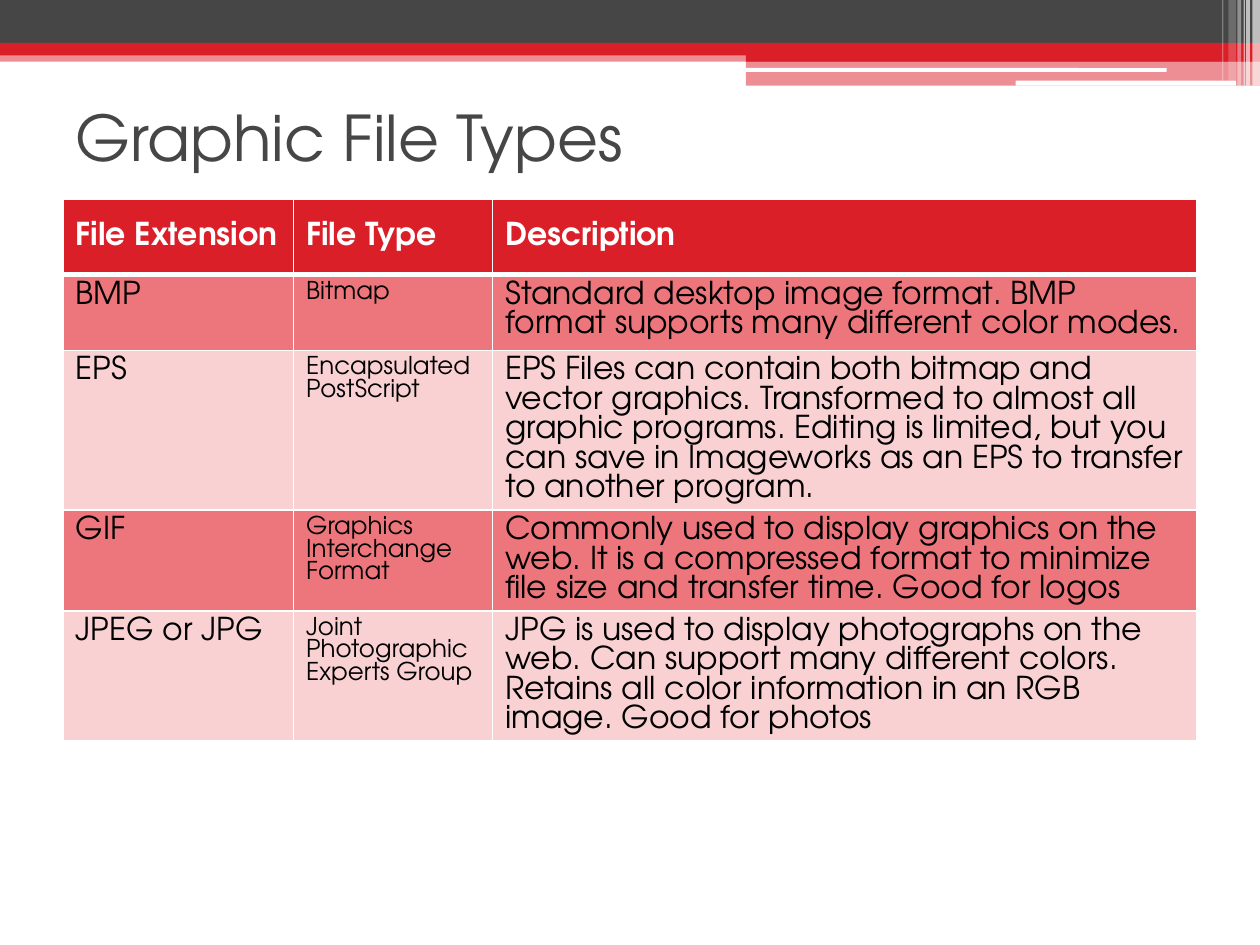
from dataclasses import dataclass

from lxml.etree import SubElement
from pptx import Presentation
from pptx.dml.color import RGBColor
from pptx.enum.shapes import MSO_SHAPE
from pptx.enum.text import MSO_ANCHOR, MSO_AUTO_SIZE, PP_ALIGN
from pptx.oxml import parse_xml
from pptx.oxml.ns import nsdecls, qn
from pptx.util import Inches, Pt


@dataclass(frozen=True)
class Theme:
    """Colours, font and type sizes of the slide."""
    font: str = "TeX Gyre Adventor"
    dark: str = "464646"
    red: str = "DA1F28"
    white: str = "FFFFFF"
    black: str = "000000"
    bands: tuple = ("EC767C", "F9D1D3")
    title_size: int = 36
    body_size: int = 18
    small_size: int = 14


THEME = Theme()
TITLE = "Graphic File Types"
COLUMN_WIDTHS = (1.83, 1.58, 5.59)
ROWS = (
    ("File Extension", "File Type", "Description"),
    ("BMP", "Bitmap",
     "Standard desktop image format. BMP format supports many different color modes."),
    ("EPS", "Encapsulated PostScript",
     "EPS Files can contain both bitmap and vector graphics. Transformed to almost all "
     "graphic programs. Editing is limited, but you can save in Imageworks as an EPS to "
     "transfer to another program."),
    ("GIF", "Graphics Interchange Format",
     "Commonly used to display graphics on the web. It is a compressed format to "
     "minimize file size and transfer time. Good for logos"),
    ("JPEG or JPG", "Joint Photographic Experts Group",
     "JPG is used to display photographs on the web. Can support many different colors. "
     "Retains all color information in an RGB image. Good for photos"),
)


def apply_format(target, values):
    """Set every attribute named in a dict of format values."""
    for name, value in values.items():
        setattr(target, name, value)


def format_text(text_frame, size, color, bold=False):
    """Give all paragraphs of a text frame one style."""
    for paragraph in text_frame.paragraphs:
        paragraph.alignment = PP_ALIGN.LEFT
        for run in paragraph.runs:
            apply_format(run.font, {"name": THEME.font, "size": Pt(size), "bold": bold})
            run.font.color.rgb = RGBColor.from_string(color)


def add_bar(slide, box, color, opacity=100, kind=MSO_SHAPE.RECTANGLE):
    """Add a borderless bar with an optional opacity in percent."""
    shape = slide.shapes.add_shape(kind, *map(Inches, box))
    shape.shadow.inherit = False
    shape.line.fill.background()
    shape.fill.solid()
    shape.fill.fore_color.rgb = RGBColor.from_string(color)
    if opacity < 100:
        color_element = shape.element.spPr.find(qn("a:solidFill"))[0]
        SubElement(color_element, qn("a:alpha"), val=str(opacity * 1000))


def add_banner(slide, box):
    """Draw the layered bands and vertical stripes across the top."""
    left, top, width, height = box
    step = left + 5.92
    step_width = left + width - step
    bands = (
        (left, 0.4, width, 0.09, THEME.red, 50),
        (left, 0, width, 0.34, THEME.dark, 100),
        (left, 0.34, width, 0.1, THEME.red, 100),
        (step, 0.39, step_width, 0.1, THEME.red, 100),
        (step, 0.48, step_width, 0.2, THEME.red, 50),
    )
    for x, y, bar_width, bar_height, color, opacity in bands:
        add_bar(slide, (x, top + y, bar_width, bar_height), color, opacity)
    for x, y, bar_width, bar_height in ((5.91, 0.54, 3.35, 0.03), (8.06, 0.64, 1.75, 0.04)):
        add_bar(slide, (left + x, top + y, bar_width, bar_height), THEME.white,
                kind=MSO_SHAPE.ROUNDED_RECTANGLE)
    stripes = (
        (9.94, 0.06, height, 65), (9.89, 0.03, height, 65), (9.87, 0.01, height, 60),
        (9.82, 0.03, height, 40), (9.75, 0.06, 0.64, 20), (9.7, 0.01, 0.64, 30),
    )
    for x, stripe_width, stripe_height, opacity in stripes:
        add_bar(slide, (left + x, top, stripe_width, stripe_height), THEME.white, opacity)


def add_title(slide, box):
    """Place and style the title placeholder."""
    title = slide.shapes.title
    apply_format(title, dict(zip(("left", "top", "width", "height"), map(Inches, box))))
    title.text = TITLE
    apply_format(title.text_frame, {
        "vertical_anchor": MSO_ANCHOR.MIDDLE,
        "auto_size": MSO_AUTO_SIZE.NONE,
        "word_wrap": True,
    })
    format_text(title.text_frame, THEME.title_size, THEME.dark)


def set_borders(cell, bottom_width):
    """Draw white cell borders with the given bottom width in points."""
    properties = cell._tc.get_or_add_tcPr()
    widths = {"lnL": 1, "lnR": 1, "lnT": 1, "lnB": bottom_width}
    for index, (side, width) in enumerate(widths.items()):
        border = parse_xml(
            f'<a:{side} {nsdecls("a")} w="{Pt(width)}"><a:solidFill>'
            f'<a:srgbClr val="{THEME.white}"/></a:solidFill></a:{side}>')
        properties.insert(index, border)


def format_cell(cell, row_index, column_index):
    """Style one cell as header or as part of a colour band."""
    header = row_index == 0
    small = column_index == 1 and not header
    cell.fill.solid()
    cell.fill.fore_color.rgb = RGBColor.from_string(
        THEME.red if header else THEME.bands[(row_index - 1) % 2])
    cell.vertical_anchor = MSO_ANCHOR.MIDDLE if header else MSO_ANCHOR.TOP
    format_text(
        cell.text_frame,
        THEME.small_size if small else THEME.body_size,
        THEME.white if header else THEME.black,
        bold=header,
    )
    set_borders(cell, 3 if header else 1)


def add_file_table(slide, box):
    """Add the table of file types with equal minimum row heights."""
    table = slide.shapes.add_table(len(ROWS), len(COLUMN_WIDTHS), *map(Inches, box)).table
    for column, width in zip(table.columns, COLUMN_WIDTHS):
        column.width = Inches(width)
    for row_index, texts in enumerate(ROWS):
        for column_index, text in enumerate(texts):
            cell = table.cell(row_index, column_index)
            cell.text = text
            format_cell(cell, row_index, column_index)


def main():
    """Build and save the presentation."""
    presentation = Presentation()
    apply_format(presentation, {"slide_width": Inches(10), "slide_height": Inches(7.5)})
    slide = presentation.slides.add_slide(presentation.slide_layouts.get_by_name("Title Only"))
    add_banner(slide, (0, 0, 10, 0.68))
    add_title(slide, (0.5, 0.75, 9, 0.67))
    add_file_table(slide, (0.5, 1.58, 9, 0.6 * len(ROWS)))
    presentation.save("out.pptx")


if __name__ == "__main__":
    main()
